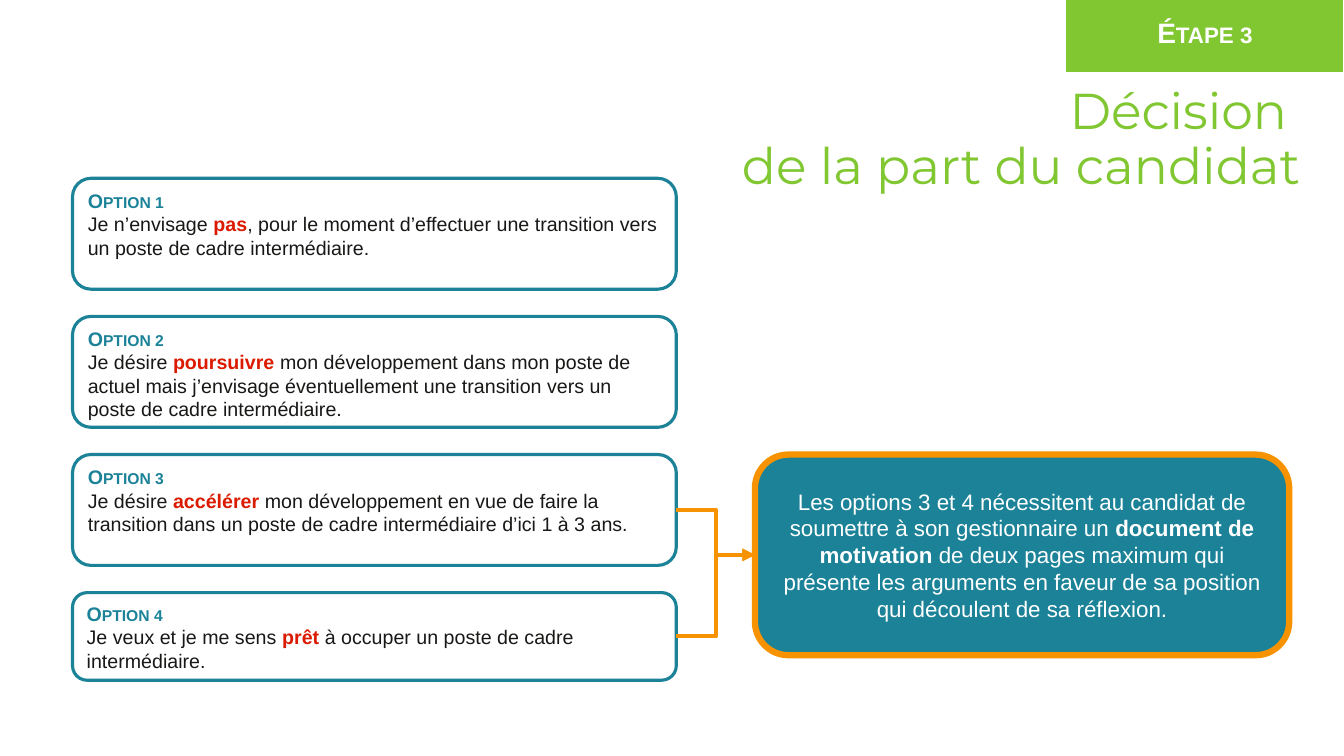
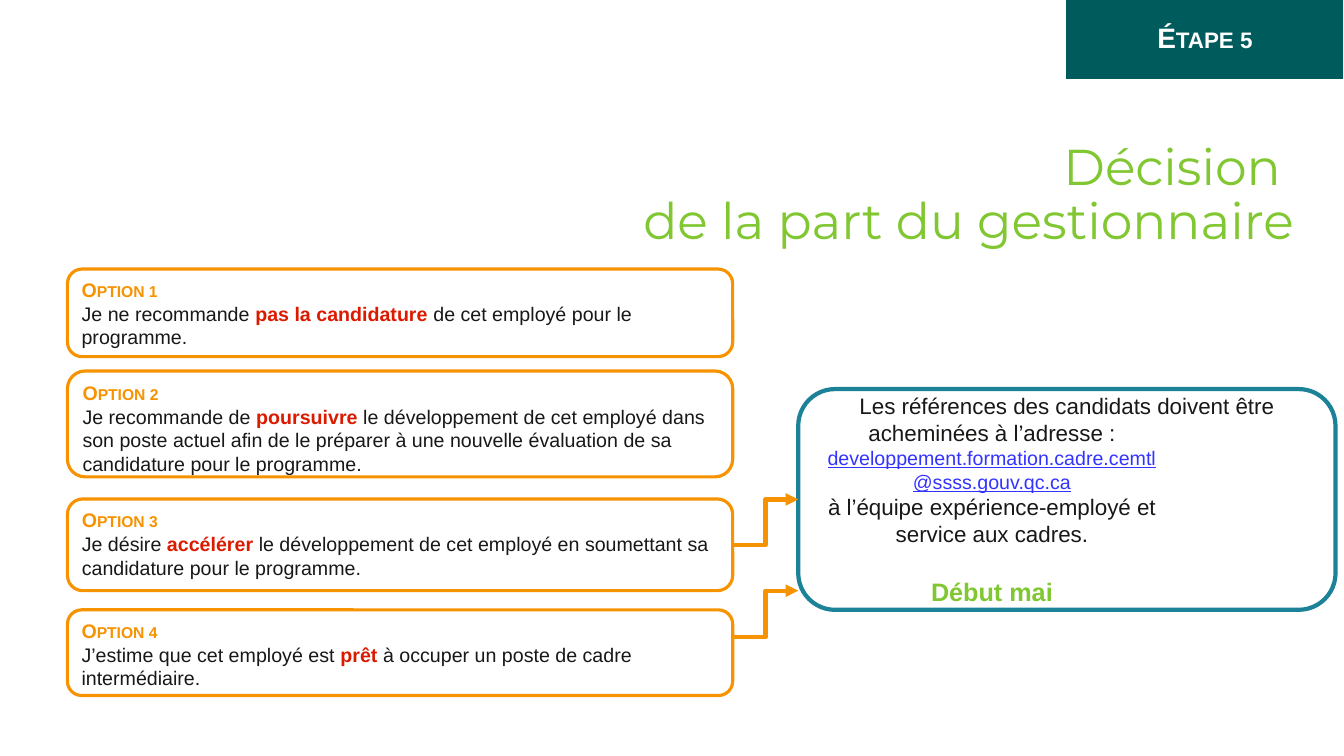
import pptx
import pptx.util
import pptx.dml.color
import pptx.enum.shapes
import pptx.enum.text
import pptx.oxml
import pptx.oxml.ns
from dataclasses import dataclass

Pt = pptx.util.Pt
SHAPE = pptx.enum.shapes.MSO_SHAPE
ALIGN = pptx.enum.text.PP_ALIGN
ANCHOR = pptx.enum.text.MSO_ANCHOR


@dataclass(frozen=True)
class Theme:
    green: str = "81C731"
    teal: str = "1B8298"
    dark_teal: str = "005B5D"
    orange: str = "F79200"
    red: str = "DB1A00"
    blue: str = "3333FF"
    ink: str = "181817"
    white: str = "FFFFFF"
    title_font: str = "Montserrat"
    body_font: str = "Arial"
    title_size: int = 36
    band_size: int = 20
    date_size: int = 18
    callout_size: int = 16
    option_size: int = 14


T = Theme()

# Content: an option is (before, key word, after); a callout paragraph is
# a dict of its runs, each run being (text, format), and its layout.
SLIDES = [
    dict(
        band=("Étape 3", T.green, -2.9, 55.4),
        title=["Décision ", "de la part du candidat"],
        title_at=(142.6, 48.2),
        option_color=T.teal,
        option_left=51.8, option_width=431.3,
        option_tops=[127.4 + 98.64 * i for i in range(4)],
        option_heights=[79.2, 79.2, 79.2, 62.6],
        options=[
            ("Je n’envisage ", "pas",
             ", pour le moment d’effectuer une transition vers un poste de cadre intermédiaire."),
            ("Je désire ", "poursuivre",
             " mon développement dans mon poste de actuel mais j’envisage éventuellement "
             "une transition vers un poste de cadre intermédiaire."),
            ("Je désire ", "accélérer",
             " mon développement en vue de faire la transition dans un poste de cadre "
             "intermédiaire d’ici 1 à 3 ans."),
            ("Je veux et je me sens ", "prêt",
             " à occuper un poste de cadre intermédiaire."),
        ],
        callout_at=(539.3, 324.7, 381.6, 143.3),
        callout_style=dict(fill=T.teal, line=T.orange, weight=4.5),
        callout_color=T.white,
        callout=[
            dict(runs=[
                ("Les options 3 et 4 nécessitent au candidat de soumettre à son gestionnaire un ", {}),
                ("document de motivation ", dict(bold=True)),
                ("de deux pages maximum qui présente les arguments en faveur de sa position "
                 "qui découlent de sa réflexion.", {}),
            ]),
        ],
        links=[(2, None), (3, None)],
    ),
    dict(
        band=("Étape 5", T.dark_teal, -0.7, 57.6),
        title=["Décision ", "de la part du gestionnaire"],
        title_at=(138.2, 87.8),
        option_color=T.orange,
        option_left=48.2, option_width=475.2,
        option_tops=[192.2, 265, 356.4, 435.6],
        option_heights=[62.6, 75.6, 65.5, 61.2],
        options=[
            ("Je ne recommande ", "pas la candidature ",
             "de cet employé pour le programme."),
            ("Je recommande de ", "poursuivre",
             " le développement de cet employé dans son poste actuel afin de le préparer "
             "à une nouvelle évaluation de sa candidature pour le programme."),
            ("Je désire ", "accélérer",
             " le développement de cet employé en soumettant sa candidature pour le programme."),
            ("J’estime que cet employé est ", "prêt",
             " à occuper un poste de cadre intermédiaire."),
        ],
        callout_at=(570.2, 277.9, 383.8, 157.7),
        callout_style=dict(fill=T.white, line=T.teal, weight=3),
        callout_color=T.ink,
        callout=[
            dict(runs=[("Les références des candidats doivent être", {})]),
            dict(runs=[("acheminées à l’adresse :", {})], right_indent=107),
            dict(runs=[("developpement.formation.cadre.cemtl@ssss.gouv.qc.ca",
                        dict(size=T.option_size, color=T.blue, underline=True))]),
            dict(runs=[("à l’équipe expérience-employé et", {})]),
            dict(runs=[("service aux cadres.", {})]),
            dict(runs=[("Début mai", dict(size=T.date_size, color=T.green, bold=True))],
                 space_before=21),
        ],
        # Each link: option index, and its (start, end) heights when not glued
        links=[(2, None), (3, (455.2, 421.9))],
    ),
]


def rgb(color):
    return pptx.dml.color.RGBColor.from_string(color)


def add_run(p, text, size=T.option_size, color=T.ink, font=T.body_font,
            bold=False, underline=False, small_caps=False):
    r = p.add_run()
    r.text = text
    r.font.name, r.font.size = font, Pt(size)
    r.font.bold, r.font.underline = bold, underline
    r.font.color.rgb = rgb(color)
    if small_caps:
        r.font._element.set("cap", "small")


def paragraphs(tf, count):
    """Return count paragraphs of the frame, the first one already there."""
    return [tf.paragraphs[0]] + [tf.add_paragraph() for _ in range(count - 1)]


def add_box(s, kind, at, fill, line, weight, align=ALIGN.LEFT, anchor=ANCHOR.MIDDLE):
    sp = s.shapes.add_shape(kind, *map(Pt, at))
    sp.shadow.inherit = False
    sp.fill.solid()
    sp.fill.fore_color.rgb = rgb(fill)
    sp.line.color.rgb = rgb(line)
    sp.line.width = Pt(weight)
    tf = sp.text_frame
    tf.word_wrap = True
    tf.vertical_anchor = anchor
    tf.paragraphs[0].alignment = align
    return sp


def add_title(s, lines, at):
    sp = s.shapes.title
    sp.left, sp.top = map(Pt, at)
    sp.width, sp.height = Pt(793.4), Pt(104.4)
    tf = sp.text_frame
    tf.auto_size = pptx.enum.text.MSO_AUTO_SIZE.NONE
    tf.vertical_anchor = ANCHOR.MIDDLE
    for p, line in zip(paragraphs(tf, len(lines)), lines):
        p.alignment, p.line_spacing = ALIGN.RIGHT, 0.9
        add_run(p, line, size=T.title_size, color=T.green, font=T.title_font)


def add_band(s, text, fill, top, height):
    sp = add_box(s, SHAPE.RECTANGLE, (761, top, 199.4, height), fill, T.white, 1.5,
                 align=ALIGN.CENTER)
    p = sp.text_frame.paragraphs[0]
    p.line_spacing = 0.9
    add_run(p, text, size=T.band_size, color=T.white, bold=True, small_caps=True)


def add_option(s, number, parts, at, color):
    sp = add_box(s, SHAPE.ROUNDED_RECTANGLE, at, T.white, color, 2.25, anchor=ANCHOR.TOP)
    head, body = paragraphs(sp.text_frame, 2)
    body.alignment = ALIGN.LEFT
    add_run(head, f"Option {number}", color=color, bold=True, small_caps=True)
    before, key, after = parts
    add_run(body, before)
    add_run(body, key, color=T.red, bold=True)
    add_run(body, after)
    return sp


def add_callout(s, at, style, color, content):
    sp = add_box(s, SHAPE.ROUNDED_RECTANGLE, at, **style)
    for p, item in zip(paragraphs(sp.text_frame, len(content)), content):
        p.alignment = ALIGN.CENTER
        if "space_before" in item:
            p.space_before = Pt(item["space_before"])
        if "right_indent" in item:
            p._p.get_or_add_pPr().set("marR", str(Pt(item["right_indent"])))
        for text, fmt in item["runs"]:
            add_run(p, text, **{"size": T.callout_size, "color": color, **fmt})
    return sp


def add_link(s, option, callout, heights):
    y1, y2 = map(Pt, heights or (0, 0))
    c = s.shapes.add_connector(pptx.enum.shapes.MSO_CONNECTOR.ELBOW,
                               option.left + option.width, y1, callout.left, y2)
    if heights is None:
        c.begin_connect(option, 3)
        c.end_connect(callout, 1)
    c.line.color.rgb = rgb(T.orange)
    c.line.width = Pt(3)
    ns = pptx.oxml.ns.nsdecls("a")
    ln = c.line._get_or_add_ln()
    ln.append(pptx.oxml.parse_xml(f'<a:tailEnd {ns} type="triangle"/>'))
    ln.addnext(pptx.oxml.parse_xml(f"<a:effectLst {ns}/>"))


def build_slide(prs, d):
    s = prs.slides.add_slide(prs.slide_layouts[5])
    add_title(s, d["title"], d["title_at"])
    add_band(s, *d["band"])
    rows = zip(d["options"], d["option_tops"], d["option_heights"])
    options = [
        add_option(s, i, parts, (d["option_left"], top, d["option_width"], height),
                   d["option_color"])
        for i, (parts, top, height) in enumerate(rows, 1)
    ]
    callout = add_callout(s, d["callout_at"], d["callout_style"],
                          d["callout_color"], d["callout"])
    for index, heights in d["links"]:
        add_link(s, options[index], callout, heights)


def main():
    prs = pptx.Presentation()
    prs.slide_width, prs.slide_height = Pt(960), Pt(540)
    for d in SLIDES:
        build_slide(prs, d)
    prs.save("out.pptx")


if __name__ == "__main__":
    main()
